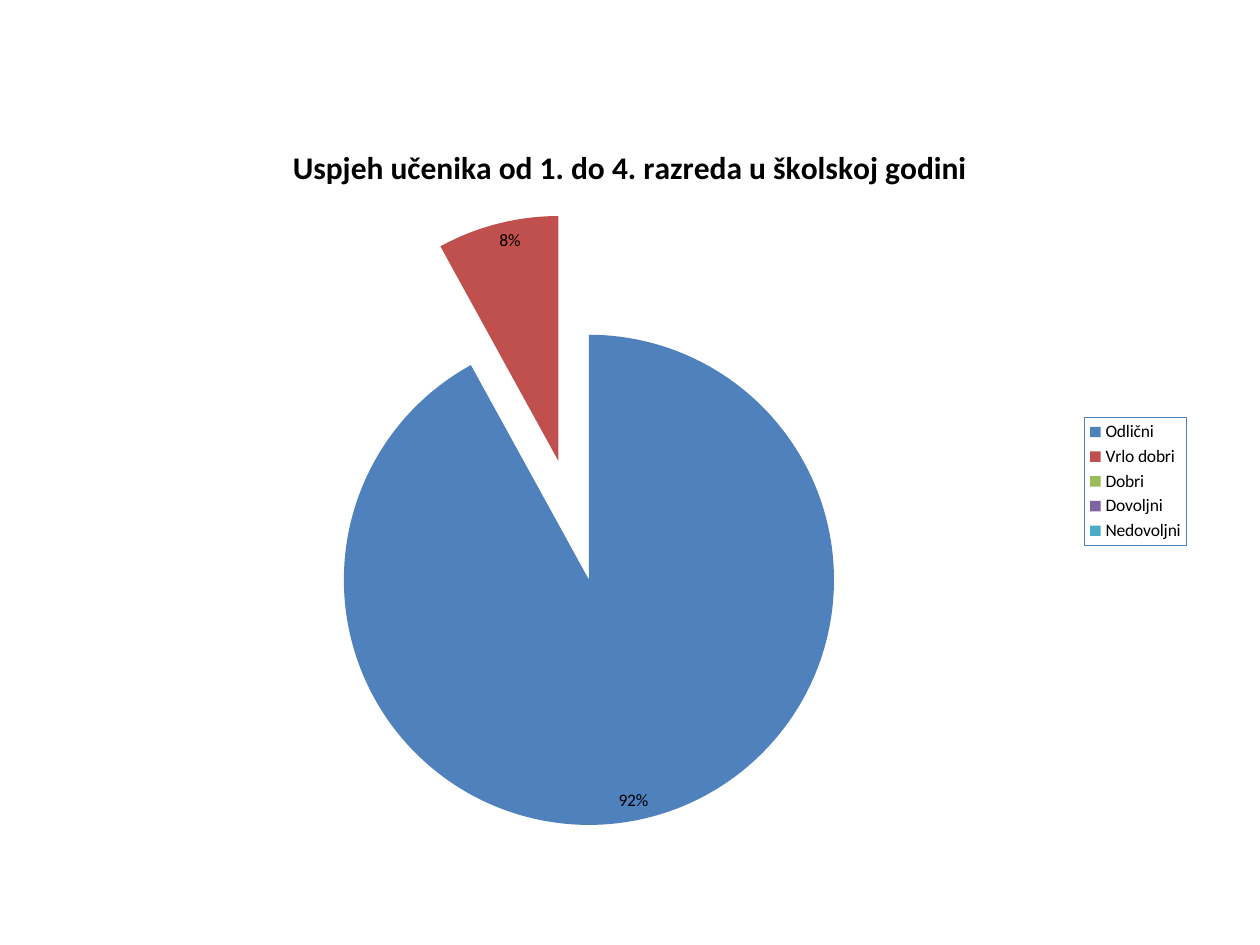
import dataclasses

import pptx
import pptx.chart.data
import pptx.dml.color
import pptx.enum.chart
import pptx.oxml
import pptx.oxml.ns
import pptx.util


@dataclasses.dataclass(frozen=True)
class Theme:
    font: str = "Calibri"
    text: str = "000000"
    border: str = "4F81BD"
    slices: tuple = ("4F81BD", "C0504D", "9BBB59", "8064A2", "4BACC6")
    body_size: int = 10
    title_size: int = 18


def rgb(value):
    return pptx.dml.color.RGBColor.from_string(value)


def style_font(font, size, bold=False):
    font.name = theme.font
    font.size = pptx.util.Pt(size)
    font.bold = bold
    font.color.rgb = rgb(theme.text)


theme = Theme()
grades = {"Odlični": 92, "Vrlo dobri": 8, "Dobri": 0, "Dovoljni": 0, "Nedovoljni": 0}

prs = pptx.Presentation()
prs.slide_width = pptx.util.Cm(25.4)
prs.slide_height = pptx.util.Cm(19.05)
s = prs.slides.add_slide(prs.slide_layouts[6])

data = pptx.chart.data.CategoryChartData()
data.categories = list(grades)
data.add_series("Series 1", list(grades.values()))
chart = s.shapes.add_chart(
    pptx.enum.chart.XL_CHART_TYPE.PIE_EXPLODED,
    pptx.util.Cm(1.27), pptx.util.Cm(2.39),
    pptx.util.Cm(22.86), pptx.util.Cm(14.63), data,
).chart
style_font(chart.font, theme.body_size)

chart.has_title = True
tf = chart.chart_title.text_frame
p = tf.paragraphs[0]
r = p.add_run()
r.text = "Uspjeh učenika od 1. do 4. razreda u školskoj godini"
style_font(r.font, theme.title_size, bold=True)
chart.chart_title.include_in_layout = False

chart.has_legend = True
legend = chart.legend
legend.position = pptx.enum.chart.XL_LEGEND_POSITION.RIGHT
legend.include_in_layout = False
style_font(legend.font, theme.body_size)
legend_pr = pptx.oxml.parse_xml(
    f'<c:spPr {pptx.oxml.ns.nsdecls("c", "a")}><a:ln w="9525"><a:solidFill>'
    f'<a:srgbClr val="{theme.border}"/></a:solidFill></a:ln></c:spPr>'
)
legend.font
legend._element.find(pptx.oxml.ns.qn("c:txPr")).addprevious(legend_pr)

plot = chart.plots[0]
plot.vary_by_categories = True
pie = plot.series[0]
for i, color in enumerate(theme.slices):
    fill = pie.points[i].format.fill
    fill.solid()
    fill.fore_color.rgb = rgb(color)

labels = pie.data_labels
labels.show_percentage = True
labels.show_value = False
labels.number_format = "0%"
labels.number_format_is_linked = False
labels.position = pptx.enum.chart.XL_LABEL_POSITION.INSIDE_END
style_font(labels.font, theme.body_size)
empty = [i for i, value in enumerate(grades.values()) if value == 0]
for position, i in enumerate(empty):
    labels._element.insert(position, pptx.oxml.parse_xml(
        f'<c:dLbl {pptx.oxml.ns.nsdecls("c")}><c:idx val="{i}"/><c:delete val="1"/></c:dLbl>'
    ))

for old in pie._element.findall(pptx.oxml.ns.qn("c:explosion")):
    pie._element.remove(old)
explosion = pptx.oxml.parse_xml(f'<c:explosion {pptx.oxml.ns.nsdecls("c")} val="25"/>')
pie._element.find(pptx.oxml.ns.qn("c:dPt")).addprevious(explosion)

prs.save("out.pptx")
